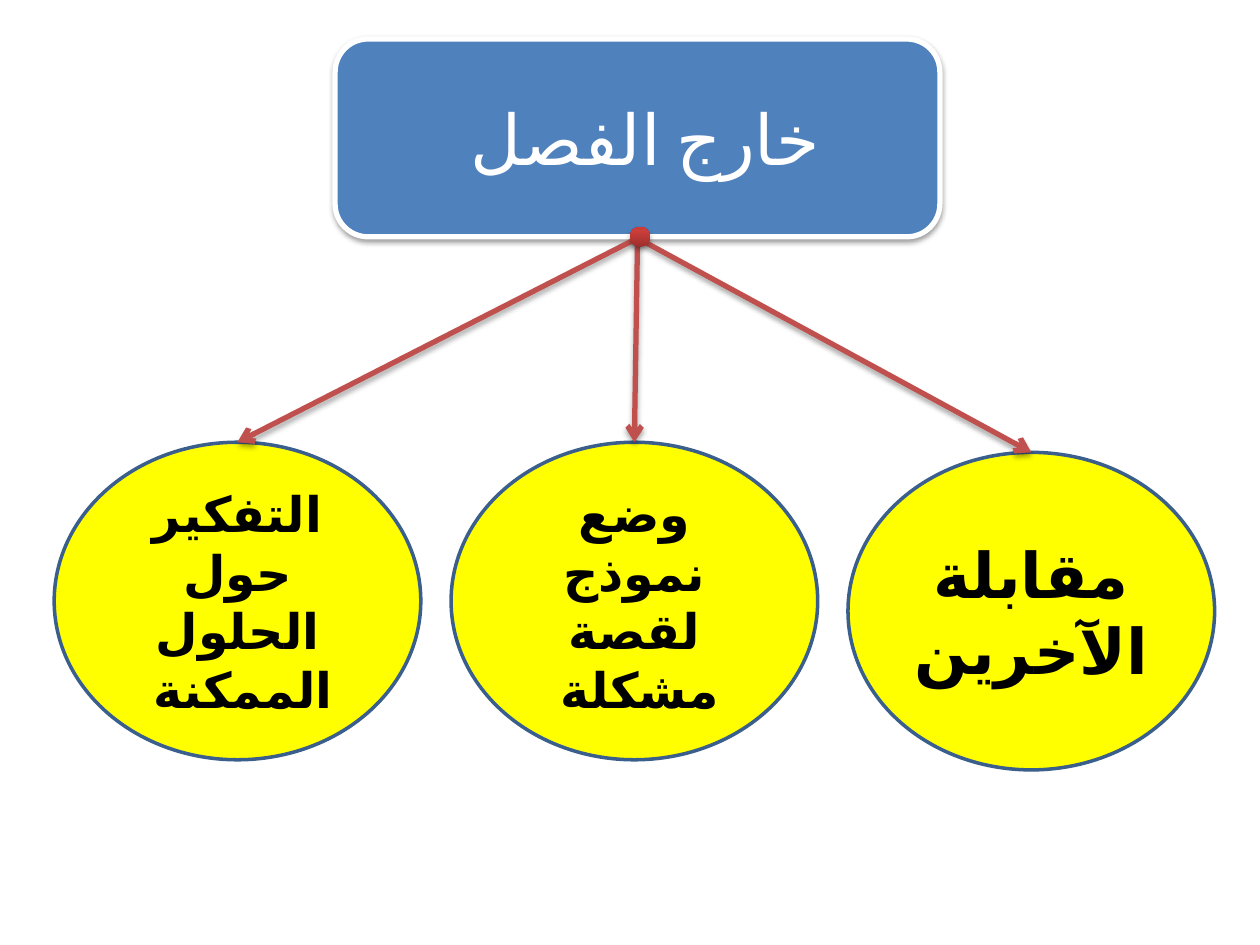
from copy import deepcopy
from lxml import etree
from pptx import Presentation
from pptx import util as u
from pptx.dml.color import RGBColor
from pptx.enum import lang, shapes, text
from pptx.oxml import ns, parse_xml

HUES = {
    "box": "4F81BD", "white": "FFFFFF", "black": "000000",
    "oval": "FFFF00", "rim": "3A5F8C", "arrow": "C0504D",
    "dark": "9C2F2D", "mid": "CB3E3A", "light": "CE3B37",
}
WIDE, HIGH = 2.91, 2.52
LEFT, STEP = 0.43, 3.15
HUB = (5.06, 1.89)
OVALS = [
    ("التفكير حول الحلول الممكنة ", 28, 3.51),
    ("وضع نموذج لقصة مشكلة ", 28, 3.51),
    ("مقابلة الآخرين ", 36, 3.59),
]


def hue(name):
    return RGBColor.from_string(HUES[name])


def add_form(slide, kind, *spot):
    form = slide.shapes.add_shape(kind, *map(u.Inches, spot))
    form.shadow.inherit = False
    return form


def paint(shape, fill, line, width):
    shape.fill.solid()
    shape.fill.fore_color.rgb = hue(fill)
    shape.line.color.rgb = hue(line)
    shape.line.width = u.Pt(width)


def write(shape, words, size, color, bold=False):
    frame = shape.text_frame
    frame.text = words
    frame.word_wrap = True
    frame.vertical_anchor = text.MSO_ANCHOR.MIDDLE
    para = frame.paragraphs[0]
    para.alignment = text.PP_ALIGN.CENTER
    para.font.name = "Calibri"
    para.font.size = u.Pt(size)
    para.font.bold = bold
    para.font.color.rgb = hue(color)
    etree.SubElement(para.font._element, ns.qn("a:cs"), typeface="Calibri")
    para._p.get_or_add_pPr().set("rtl", "1")
    para.runs[0].font.language_id = lang.MSO_LANGUAGE_ID.ARABIC_EGYPT


def shade(shape, alpha, dist):
    shape.shadow.inherit = False if hasattr(shape, "shadow") else None
    glow = shape._element.spPr.find(ns.qn("a:effectLst"))
    glow.append(parse_xml(
        f'<a:outerShdw {ns.nsdecls("a")} blurRad="{u.Pt(3.1)}" dist="{u.Pt(dist)}" '
        'dir="5400000" rotWithShape="0">'
        f'<a:srgbClr val="{HUES["black"]}"><a:alpha val="{alpha * 1000}"/></a:srgbClr>'
        '</a:outerShdw>'))


def add_head(slide):
    head = add_form(slide, shapes.MSO_SHAPE.ROUNDED_RECTANGLE, 2.66, 0.31, 4.8, 1.57)
    paint(head, "box", "white", 3)
    shade(head, 38, 1.6)
    write(head, "خارج الفصل ", 40, "white")


def add_oval(slide, words, size, left, top):
    oval = add_form(slide, shapes.MSO_SHAPE.OVAL, left, top, WIDE, HIGH)
    paint(oval, "oval", "rim", 2)
    write(oval, words, size, "black", True)


def add_arrow(slide, end):
    arrow = slide.shapes.add_connector(
        shapes.MSO_CONNECTOR.STRAIGHT, *map(u.Inches, HUB + end))
    arrow.line.color.rgb = hue("arrow")
    arrow.line.width = u.Pt(3)
    etree.SubElement(arrow.line._get_or_add_ln(), ns.qn("a:tailEnd"), type="arrow")
    etree.SubElement(arrow._element.spPr, ns.qn("a:effectLst"))
    shade(arrow, 35, 1.8)


def add_dot(slide):
    dot = add_form(slide, shapes.MSO_SHAPE.OVAL, 5, 1.8, 0.16, 0.16)
    dot.fill.gradient()
    dot.fill.gradient_angle = 90
    first = dot.fill.gradient_stops[0]._gs
    first.addnext(deepcopy(first))
    for stop, name, spot in zip(
            dot.fill.gradient_stops, ("dark", "mid", "light"), (0, 0.8, 1)):
        stop.color.rgb = hue(name)
        stop.position = spot
    dot.line.fill.background()
    shade(dot, 35, 1.8)


def main():
    deck = Presentation()
    deck.slide_width, deck.slide_height = u.Inches(10), u.Inches(7.5)
    slide = deck.slides.add_slide(deck.slide_layouts[6])
    add_head(slide)
    for i, (words, size, top) in enumerate(OVALS):
        add_oval(slide, words, size, LEFT + i * STEP, top)
    for i, (_, _, top) in enumerate(OVALS):
        add_arrow(slide, (LEFT + i * STEP + WIDE / 2, top))
    add_dot(slide)
    deck.save("out.pptx")


if __name__ == "__main__":
    main()
